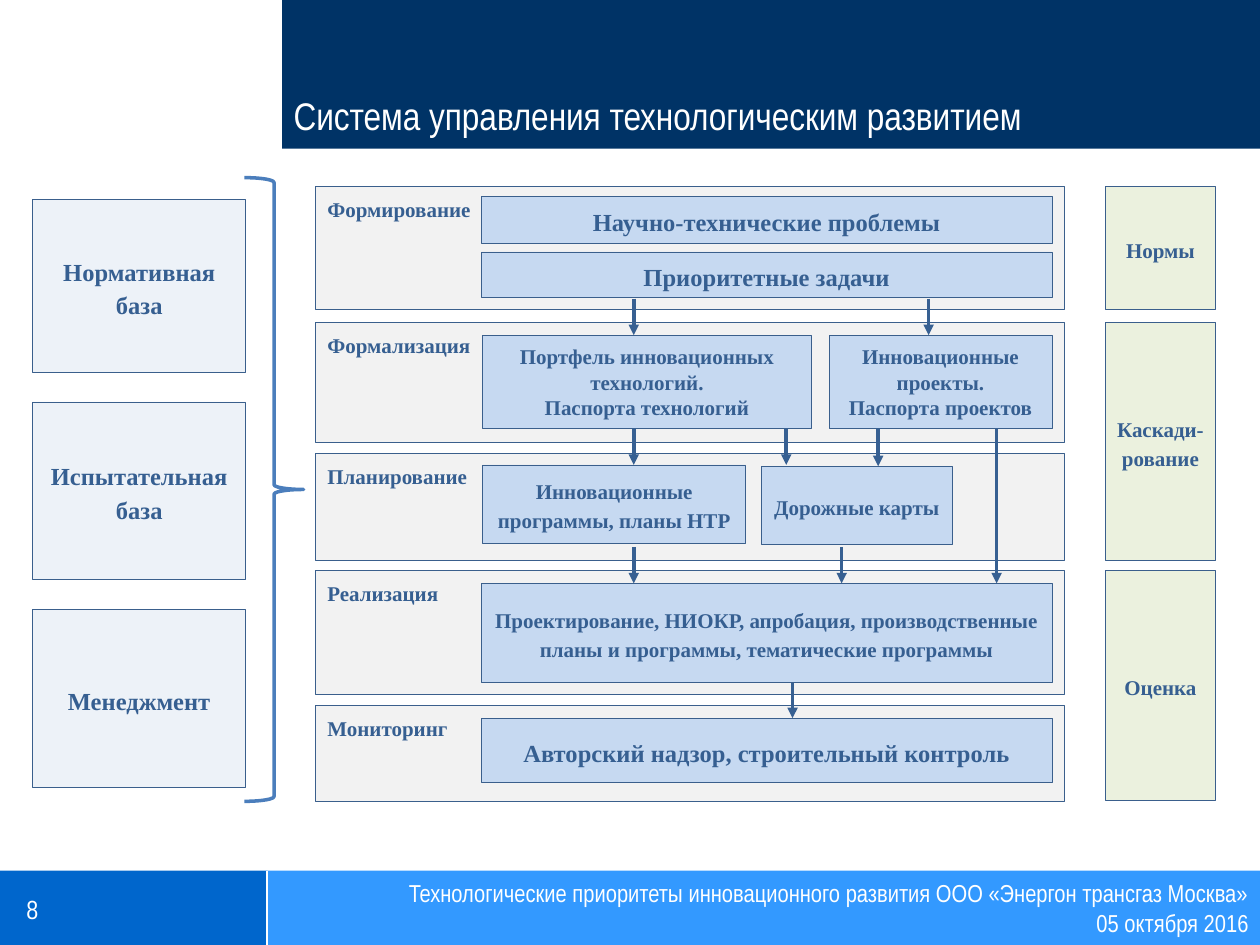
from dataclasses import dataclass

from lxml.etree import SubElement
from pptx import Presentation
from pptx.dml.color import RGBColor
from pptx.enum.shapes import MSO_CONNECTOR as Line, MSO_SHAPE as Shape
from pptx.enum.text import MSO_ANCHOR as Anchor, PP_ALIGN as Align
from pptx.oxml.ns import qn
from pptx.util import Inches, Pt

WHITE = RGBColor(0xFF, 0xFF, 0xFF)
NAVY = RGBColor(0x00, 0x33, 0x66)
DARK_BLUE = RGBColor(0x00, 0x66, 0xCC)
BRIGHT_BLUE = RGBColor(0x33, 0x99, 0xFF)
INK = RGBColor(0x36, 0x5F, 0x91)
BORDER = RGBColor(0x3A, 0x5F, 0x8C)
ARROW = RGBColor(0x37, 0x60, 0x92)
BRACE = RGBColor(0x4B, 0x7E, 0xBC)
STAGE_GREY = RGBColor(0xF2, 0xF2, 0xF2)
STEP_BLUE = RGBColor(0xC6, 0xD9, 0xF1)
BASE_BLUE = RGBColor(0xDC, 0xE6, 0xF2)
CONTROL_GREEN = RGBColor(0xEB, 0xF1, 0xDE)


@dataclass(frozen=True)
class Block:
    text: str
    left: float
    top: float
    width: float
    height: float
    size: int = 12
    spacing: float = 1.15
    side_inset: float = 0.1


@dataclass(frozen=True)
class Flow:
    x: float
    top: float
    bottom: float


# Content: stages, steps inside them, controls on the right, bases on the left
STAGE_LEFT, STAGE_WIDTH = 2.5, 5.95
STAGES = [
    Block(text, STAGE_LEFT, top, STAGE_WIDTH, height)
    for text, top, height in (
        ("Формирование", 1.48, 0.98),
        ("Формализация", 2.56, 0.95),
        ("Планирование", 3.6, 0.85),
        ("Реализация", 4.53, 0.98),
        ("Мониторинг", 5.6, 0.76),
    )
]

STEP_LEFT, STEP_WIDTH = 3.82, 4.53
STEPS = [
    Block("Научно-технические проблемы", STEP_LEFT, 1.56, STEP_WIDTH, 0.37, 14),
    Block("Приоритетные задачи", STEP_LEFT, 2, STEP_WIDTH, 0.36, 14),
    Block("Портфель инновационных технологий.\nПаспорта технологий",
          3.83, 2.66, 2.61, 0.74, spacing=1),
    Block("Инновационные проекты.\nПаспорта проектов",
          6.58, 2.66, 1.77, 0.74, spacing=1),
    Block("Инновационные программы, планы НТР", 3.83, 3.69, 2.09, 0.62),
    Block("Дорожные карты", 6.04, 3.7, 1.52, 0.62),
    Block("Проектирование, НИОКР, апробация, производственные планы "
          "и программы, тематические программы",
          STEP_LEFT, 4.63, STEP_WIDTH, 0.79),
    Block("Авторский надзор, строительный контроль",
          STEP_LEFT, 5.7, STEP_WIDTH, 0.51, 14),
]

CONTROL_LEFT, CONTROL_WIDTH = 8.77, 0.88
CONTROLS = [
    Block("Нормы", CONTROL_LEFT, 1.48, CONTROL_WIDTH, 0.98),
    Block("Каскади-рование", CONTROL_LEFT, 2.56, CONTROL_WIDTH, 1.89,
          side_inset=0.04),
    Block("Оценка", CONTROL_LEFT, 4.53, CONTROL_WIDTH, 1.82),
]

BASES = [
    Block(text, 0.26, top, 1.69, height, 14)
    for text, top, height in (
        ("Нормативная база", 1.58, 1.38),
        ("Испытательная база", 3.19, 1.41),
        ("Менеджмент", 4.84, 1.41),
    )
]

FLOWS = [
    Flow(5.03, 2.37, 2.66),
    Flow(7.37, 2.37, 2.66),
    Flow(5.03, 3.4, 3.69),
    Flow(6.24, 3.4, 3.69),
    Flow(6.97, 3.4, 3.7),
    Flow(7.91, 3.4, 4.63),
    Flow(5.03, 4.34, 4.63),
    Flow(6.68, 4.34, 4.63),
    Flow(6.29, 5.42, 5.7),
]


def write(shape, text: str, font: dict, paragraph_format: dict,
          frame_format: dict) -> None:
    """Fill a shape with paragraphs, one for each line of the text."""
    frame = shape.text_frame
    for name, value in {"word_wrap": True, **frame_format}.items():
        setattr(frame, name, value)
    for index, line in enumerate(text.split("\n")):
        paragraph = frame.add_paragraph() if index else frame.paragraphs[0]
        run = paragraph.add_run()
        run.text = line
        for name, value in paragraph_format.items():
            setattr(paragraph, name, value)
        color = font["color"]
        for name, value in font.items():
            if name != "color":
                setattr(run.font, name, value)
        run.font.color.rgb = color


def add_panel(slide, left: float, top: float, width: float, height: float,
              fill: RGBColor):
    panel = slide.shapes.add_shape(
        Shape.RECTANGLE, *map(Inches, (left, top, width, height)))
    panel.shadow.inherit = False
    panel.fill.solid()
    panel.fill.fore_color.rgb = fill
    panel.line.fill.background()
    return panel


def add_block(slide, block: Block, fill: RGBColor, align: Align = Align.CENTER,
              anchor: Anchor = Anchor.MIDDLE, space_after: int = 0):
    panel = add_panel(slide, block.left, block.top, block.width, block.height, fill)
    panel.line.color.rgb = BORDER
    panel.line.width = Pt(0.5)
    write(
        panel, block.text,
        {"name": "Times New Roman", "size": Pt(block.size), "bold": True,
         "color": INK},
        {"alignment": align, "line_spacing": block.spacing,
         "space_after": Pt(space_after)},
        {"vertical_anchor": anchor, "margin_left": Inches(block.side_inset),
         "margin_right": Inches(block.side_inset)},
    )
    return panel


def add_line(slide, start: tuple, end: tuple, color: RGBColor, width: float):
    line = slide.shapes.add_connector(
        Line.STRAIGHT, *map(Inches, (*start, *end)))
    line.line.color.rgb = color
    line.line.width = Pt(width)
    SubElement(line._element.spPr, qn("a:effectLst"))
    return line


def add_arrow(slide, flow: Flow) -> None:
    arrow = add_line(slide, (flow.x, flow.top), (flow.x, flow.bottom), ARROW, 2)
    SubElement(arrow.line._get_or_add_ln(), qn("a:tailEnd"), type="triangle")


def add_caption(slide, text: str, box: tuple, size: int, align: Align,
                anchor: Anchor = Anchor.TOP, inset_y: float = 0) -> None:
    caption = slide.shapes.add_textbox(*map(Inches, box))
    write(
        caption, text,
        {"name": "Arial Narrow", "size": Pt(size), "color": WHITE},
        {"alignment": align},
        {"vertical_anchor": anchor,
         "margin_left": Inches(0.09), "margin_right": Inches(0.09),
         "margin_top": Inches(inset_y), "margin_bottom": Inches(inset_y)},
    )


def main() -> None:
    deck = Presentation()
    deck.slide_width, deck.slide_height = Inches(10), Inches(7.5)
    slide = deck.slides.add_slide(deck.slide_layouts[6])

    # Header and footer
    add_panel(slide, 0, 6.91, 2.12, 0.59, DARK_BLUE)
    add_panel(slide, 2.12, 6.91, 7.88, 0.59, BRIGHT_BLUE)
    add_line(slide, (2.12, 6.91), (2.12, 7.5), WHITE, 1.25)
    add_panel(slide, 2.24, 0, 7.76, 1.18, NAVY)
    add_caption(slide, "Система управления технологическим развитием",
                (2.24, 0, 7.76, 1.1), 22, Align.LEFT, Anchor.BOTTOM)
    add_caption(slide, "8", (0.12, 7.05, 2.12, 0.34), 15, Align.LEFT,
                inset_y=0.04)
    add_caption(slide, "Технологические приоритеты инновационного развития "
                "ООО «Энергон трансгаз Москва»\n05 октября 2016",
                (2.35, 6.97, 7.65, 0.47), 14, Align.RIGHT)

    # Stages with their steps, then the controls
    for stage in STAGES:
        add_block(slide, stage, STAGE_GREY, Align.LEFT, Anchor.TOP, 10)
    for step in STEPS:
        # The single-line and planning steps sit above a paragraph gap
        add_block(slide, step, STEP_BLUE)
    for control in CONTROLS:
        add_block(slide, control, CONTROL_GREEN)
    for flow in FLOWS:
        add_arrow(slide, flow)

    # Bases, half transparent, joined by a brace
    for base in BASES:
        panel = add_block(slide, base, BASE_BLUE)
        tint = panel._element.spPr.find(f"{qn('a:solidFill')}/{qn('a:srgbClr')}")
        SubElement(tint, qn("a:alpha"), val="50000")
    brace = slide.shapes.add_shape(
        Shape.RIGHT_BRACE, *map(Inches, (1.94, 1.41, 0.47, 4.95)))
    brace.shadow.inherit = False
    brace.fill.background()
    brace.line.color.rgb = BRACE
    brace.line.width = Pt(2)
    brace.adjustments[0], brace.adjustments[1] = 0.08, 0.5

    deck.save("out.pptx")


if __name__ == "__main__":
    main()
